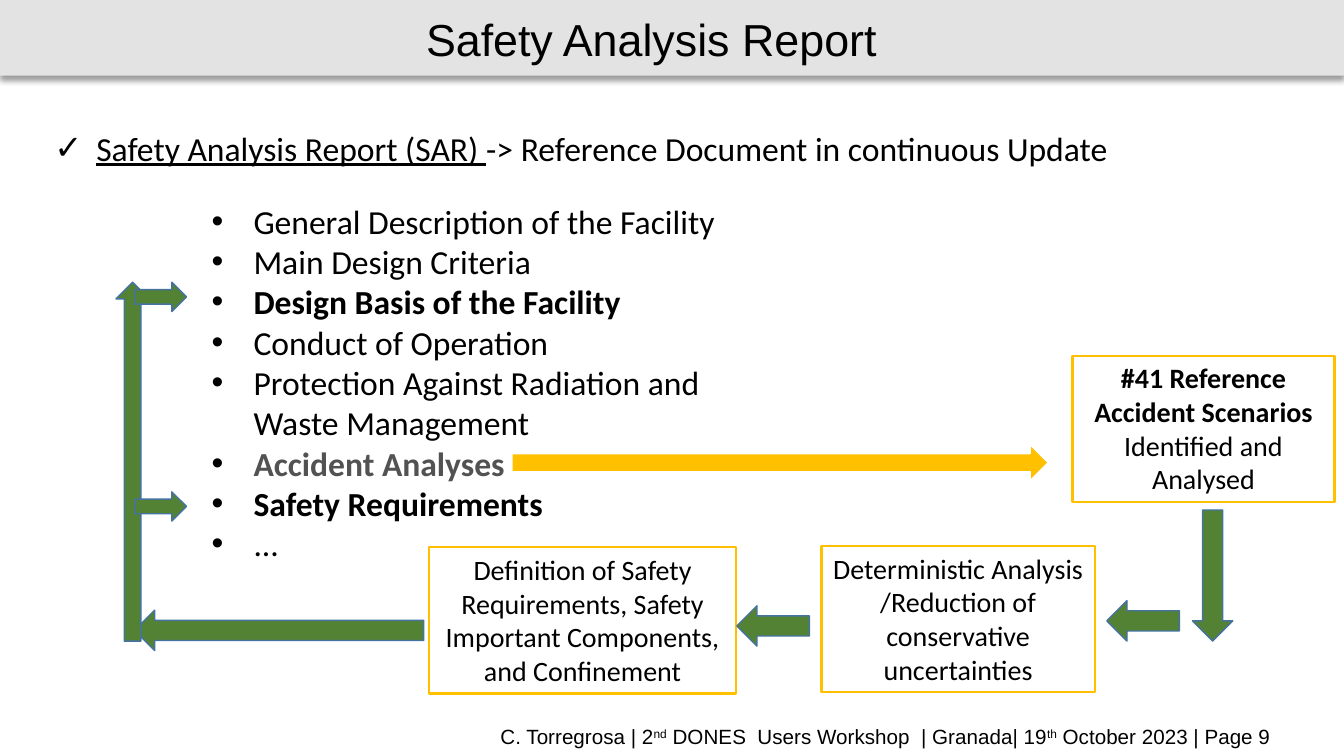
from lxml.etree import SubElement
from pptx import Presentation
from pptx.dml.color import RGBColor
from pptx.enum.shapes import MSO_SHAPE
from pptx.enum.text import MSO_ANCHOR, PP_ALIGN
from pptx.oxml import parse_xml
from pptx.oxml.ns import nsdecls, qn
from pptx.util import Pt

COLORS = {"black": "000000", "white": "FFFFFF", "band": "E3E3E3", "gray": "525252",
          "gold": "FFC000", "green": "548235", "blue": "43739E"}


def color(name):
    return RGBColor.from_string(COLORS[name])


def write(shape, paras, size=24, font="Calibri", align=PP_ALIGN.LEFT,
          anchor=MSO_ANCHOR.TOP, bullet=None, indent=0, hang=30):
    """Fill a shape with paragraphs, each a list of (text, format) runs."""
    frame = shape.text_frame
    frame.word_wrap = True
    frame.vertical_anchor = anchor
    for i, runs in enumerate(paras):
        para = frame.paragraphs[0] if i == 0 else frame.add_paragraph()
        para.alignment = align
        if bullet:
            props = para._p.get_or_add_pPr()
            props.set("marL", str(Pt(indent)))
            props.set("indent", str(-Pt(hang)))
            tint = SubElement(props, qn("a:buClr"))
            SubElement(tint, qn("a:srgbClr"), val=COLORS["black"])
            SubElement(props, qn("a:buFont"), typeface="Arial")
            SubElement(props, qn("a:buChar"), char=bullet)
        for text, look in runs:
            run = para.add_run()
            run.text = text
            run.font.name = font
            run.font.size = Pt(size)
            run.font.bold = look.get("bold", False)
            run.font.underline = look.get("under", False)
            run.font.color.rgb = color(look.get("color", "black"))
            if look.get("raised"):
                run._r.get_or_add_rPr().set("baseline", "30000")


deck = Presentation()
deck.slide_width, deck.slide_height = Pt(960), Pt(540)
slide = deck.slides.add_slide(deck.slide_layouts[6])
shapes = slide.shapes

# Header
band = shapes.add_shape(MSO_SHAPE.RECTANGLE, 0, 0, Pt(960), Pt(54))
band.fill.solid()
band.fill.fore_color.rgb = color("band")
band.line.fill.background()
band._element.spPr.append(parse_xml(
    f'<a:effectLst {nsdecls("a")}><a:outerShdw blurRad="{Pt(4)}" dist="{Pt(3)}" '
    f'dir="5400000" algn="t" rotWithShape="0"><a:srgbClr val="{COLORS["black"]}">'
    '<a:alpha val="40000"/></a:srgbClr></a:outerShdw></a:effectLst>'))

title = shapes.add_textbox(Pt(238.3), Pt(-7.2), Pt(454.3), Pt(69.8))
write(title, [[("Safety Analysis Report", {})]], size=32, font="Arial",
      align=PP_ALIGN.CENTER, anchor=MSO_ANCHOR.MIDDLE)

# Report contents
bold = {"bold": True}
topics = [
    ("General Description of the Facility", {}),
    ("Main Design Criteria", {}),
    ("Design Basis of the Facility", bold),
    ("Conduct of Operation", {}),
    ("Protection Against Radiation and Waste Management", {}),
    ("Accident Analyses", {"bold": True, "color": "gray"}),
    ("Safety Requirements", bold),
    ("...", {}),
]
listing = shapes.add_textbox(Pt(108), Pt(139.7), Pt(414), Pt(269.3))
write(listing, [[topic] for topic in topics], bullet="•", indent=66)

lead = shapes.add_textbox(Pt(31.7), Pt(87.8), Pt(828.7), Pt(36))
write(lead, [[("Safety Analysis Report (SAR) ", {"under": True}),
              ("-> Reference Document in continuous Update", {})]],
      bullet="✓", indent=30)

# Process boxes
steps = [
    (766.1, 254.2, 187.2, [[("#41 Reference Accident Scenarios ", bold),
                            ("Identified and Analysed", {})]]),
    (586.8, 390.2, 195.1, [[("Deterministic Analysis", {})],
                           [("/Reduction of conservative uncertainties", {})]]),
    (306.7, 391, 218.9, [[("Definition of Safety Requirements, Safety Important "
                           "Components, and Confinement", {})]]),
]
for left, top, width, paras in steps:
    box = shapes.add_shape(MSO_SHAPE.RECTANGLE, Pt(left), Pt(top), Pt(width), Pt(104.4))
    box.shadow.inherit = False
    box.fill.background()
    box.line.color.rgb = color("gold")
    box.line.width = Pt(1.5)
    write(box, paras, size=20, align=PP_ALIGN.CENTER)

# Arrows: left, top, width, length, turn, fill, line
arrows = [
    (851.8, 364.3, 28.8, 93.6, 0, "green", "blue"),
    (802.1, 417.6, 28.8, 51.8, 90, "green", "blue"),
    (537.8, 421.2, 28.8, 51.8, 90, "green", "blue"),
    (185, 347, 28.8, 206.6, 90, "green", "blue"),
    (82.8, 201.6, 23.8, 256.3, 180, "green", "blue"),
    (104.4, 343.4, 20.9, 36.7, 270, "green", "blue"),
    (104.4, 193.7, 20.9, 36.7, 270, "green", "blue"),
    (544.3, 139, 25.9, 383, 270, "gold", "white"),
]
for left, top, width, length, turn, fill, line in arrows:
    arrow = shapes.add_shape(MSO_SHAPE.DOWN_ARROW, Pt(left), Pt(top), Pt(width), Pt(length))
    arrow.shadow.inherit = False
    arrow.rotation = turn
    arrow.fill.solid()
    arrow.fill.fore_color.rgb = color(fill)
    arrow.line.color.rgb = color(line)
    arrow.line.width = Pt(1)

# Footer
raised = {"raised": True}
footer = shapes.add_textbox(Pt(49), Pt(515.5), Pt(865.4), Pt(20.9))
write(footer, [[("C. Torregrosa | 2", {}), ("nd", raised),
                (" DONES  Users Workshop  | Granada| 19", {}), ("th", raised),
                (" October 2023 | Page 9", {})]],
      size=14.7, font="Arial", align=PP_ALIGN.RIGHT, anchor=MSO_ANCHOR.MIDDLE)

deck.save("out.pptx")
